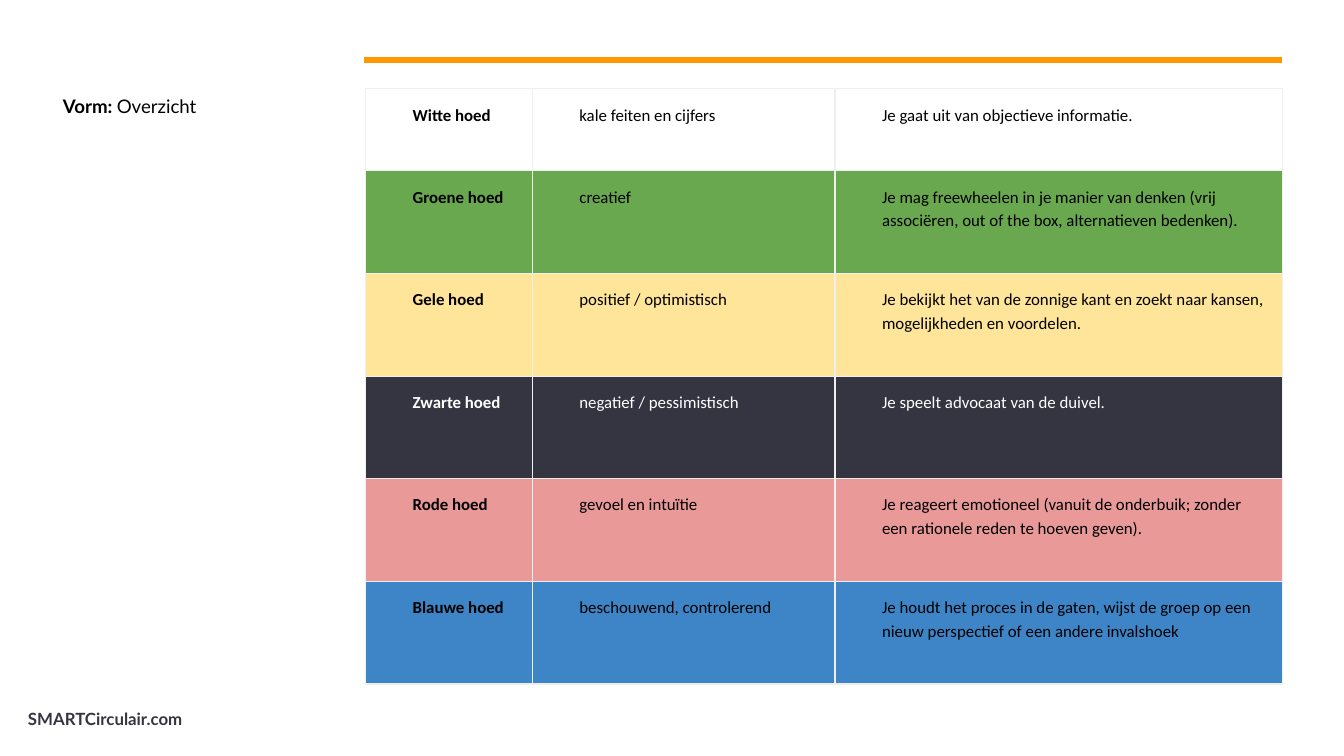
"""Build a slide with an overview table of the six thinking hats."""
from lxml import etree
from pptx import Presentation
from pptx import util as u
from pptx.dml.color import RGBColor
from pptx.enum import shapes, text
from pptx.oxml.ns import qn

COLOURS = {
    "white": "FFFFFF", "black": "000000", "dark": "343541",
    "green": "6AA84F", "yellow": "FFE599", "red": "EA9999",
    "blue": "3D85C6", "orange": "FF9800", "border": "EFEFEF",
}
HATS = [
    ("white", "black", "Witte hoed", "kale feiten en cijfers",
     "Je gaat uit van objectieve informatie."),
    ("green", "black", "Groene hoed", "creatief",
     "Je mag freewheelen in je manier van denken (vrij associëren, out of the box, "
     "alternatieven bedenken)."),
    ("yellow", "black", "Gele hoed", "positief / optimistisch",
     "Je bekijkt het van de zonnige kant en zoekt naar kansen, mogelijkheden en voordelen."),
    ("dark", "white", "Zwarte hoed", "negatief / pessimistisch",
     "Je speelt advocaat van de duivel."),
    ("red", "black", "Rode hoed", "gevoel en intuïtie",
     "Je reageert emotioneel (vanuit de onderbuik; zonder een rationele reden te hoeven geven)."),
    ("blue", "black", "Blauwe hoed", "beschouwend, controlerend",
     "Je houdt het proces in de gaten, wijst de groep op een nieuw perspectief of een "
     "andere invalshoek"),
]
FORM = [("Vorm: ", True), ("Overzicht", False)]
WEBSITE = "SMARTCirculair.com"

COLUMN_WIDTHS = [3.15, 5.72, 8.46]
ROW_HEIGHTS = [1.55] + [1.94] * 5
INSET = u.Cm(0.25)


def colour(name):
    return RGBColor.from_string(COLOURS[name])


def set_insets(target):
    target.margin_left = target.margin_right = INSET
    target.margin_top = target.margin_bottom = INSET


def set_font(font, name, size, colour_name, bold=None):
    font.name, font.size, font.bold = name, u.Pt(size), bold
    font.color.rgb = colour(colour_name)


def set_indent(paragraph, left):
    properties = paragraph._p.get_or_add_pPr()
    properties.set("marL", str(u.Cm(left)))
    properties.set("indent", "0")
    etree.SubElement(properties, qn("a:buNone"))


def add_borders(cell):
    properties = cell._tc.get_or_add_tcPr()
    for side in ("lnL", "lnR", "lnT", "lnB"):
        line = etree.SubElement(properties, qn(f"a:{side}"), w=str(u.Pt(0.75)))
        fill = etree.SubElement(line, qn("a:solidFill"))
        etree.SubElement(fill, qn("a:srgbClr"), val=COLOURS["border"])


def add_website(slide):
    frame = slide.shapes.add_textbox(u.Cm(0.28), u.Cm(13.26), u.Cm(4.7), u.Cm(0.64)).text_frame
    frame.word_wrap = True
    frame.vertical_anchor = text.MSO_ANCHOR.MIDDLE
    set_insets(frame)
    paragraph = frame.paragraphs[0]
    paragraph.text = WEBSITE
    set_font(paragraph.font, "Lato", 9, "dark", True)


def add_rule(slide):
    rule = slide.shapes.add_connector(
        shapes.MSO_CONNECTOR.STRAIGHT, u.Cm(6.88), u.Cm(1.14), u.Cm(24.23), u.Cm(1.14))
    rule.line.color.rgb = colour("orange")
    rule.line.width = u.Pt(3)
    etree.SubElement(rule._element.spPr, qn("a:effectLst"))


def fill_cell(cell, content, fill_name, text_name, bold):
    add_borders(cell)
    cell.fill.solid()
    cell.fill.fore_color.rgb = colour(fill_name)
    set_insets(cell)
    paragraph = cell.text_frame.paragraphs[0]
    paragraph.text = content
    set_indent(paragraph, 0.64)
    paragraph.line_spacing = 1.15
    paragraph.space_after = u.Pt(9)
    set_font(paragraph.font, "Calibri", 9, text_name, bold)


def add_hat_table(slide):
    table = slide.shapes.add_table(
        len(HATS), len(COLUMN_WIDTHS), u.Cm(6.91), u.Cm(1.68),
        u.Cm(sum(COLUMN_WIDTHS)), u.Cm(sum(ROW_HEIGHTS))).table
    table.first_row = table.horz_banding = False
    for column, width in zip(table.columns, COLUMN_WIDTHS):
        column.width = u.Cm(width)
    for row, height, (fill_name, text_name, *contents) in zip(table.rows, ROW_HEIGHTS, HATS):
        row.height = u.Cm(height)
        for index, (cell, content) in enumerate(zip(row.cells, contents)):
            fill_cell(cell, content, fill_name, text_name, index == 0)


def fill_form(body):
    body.left, body.top, body.width, body.height = map(u.Cm, (0.94, 1.47, 4.72, 11.3))
    frame = body.text_frame
    frame.auto_size = text.MSO_AUTO_SIZE.NONE
    frame.vertical_anchor = text.MSO_ANCHOR.TOP
    set_insets(frame)
    paragraph = frame.paragraphs[0]
    set_indent(paragraph, 0)
    paragraph.line_spacing = 1.15
    paragraph.space_before, paragraph.space_after = u.Pt(0), u.Pt(12)
    set_font(paragraph.font, "Lato", 10, "black")
    for content, bold in FORM:
        run = paragraph.add_run()
        run.text, run.font.bold = content, bold


def main():
    presentation = Presentation()
    presentation.slide_width, presentation.slide_height = u.Cm(25.4), u.Cm(14.29)
    slide = presentation.slides.add_slide(presentation.slide_layouts[1])
    slide.background.fill.solid()
    slide.background.fill.fore_color.rgb = colour("white")
    title = slide.shapes.title._element
    title.getparent().remove(title)
    add_website(slide)
    add_rule(slide)
    add_hat_table(slide)
    fill_form(slide.placeholders[1])
    presentation.save("out.pptx")


if __name__ == "__main__":
    main()
